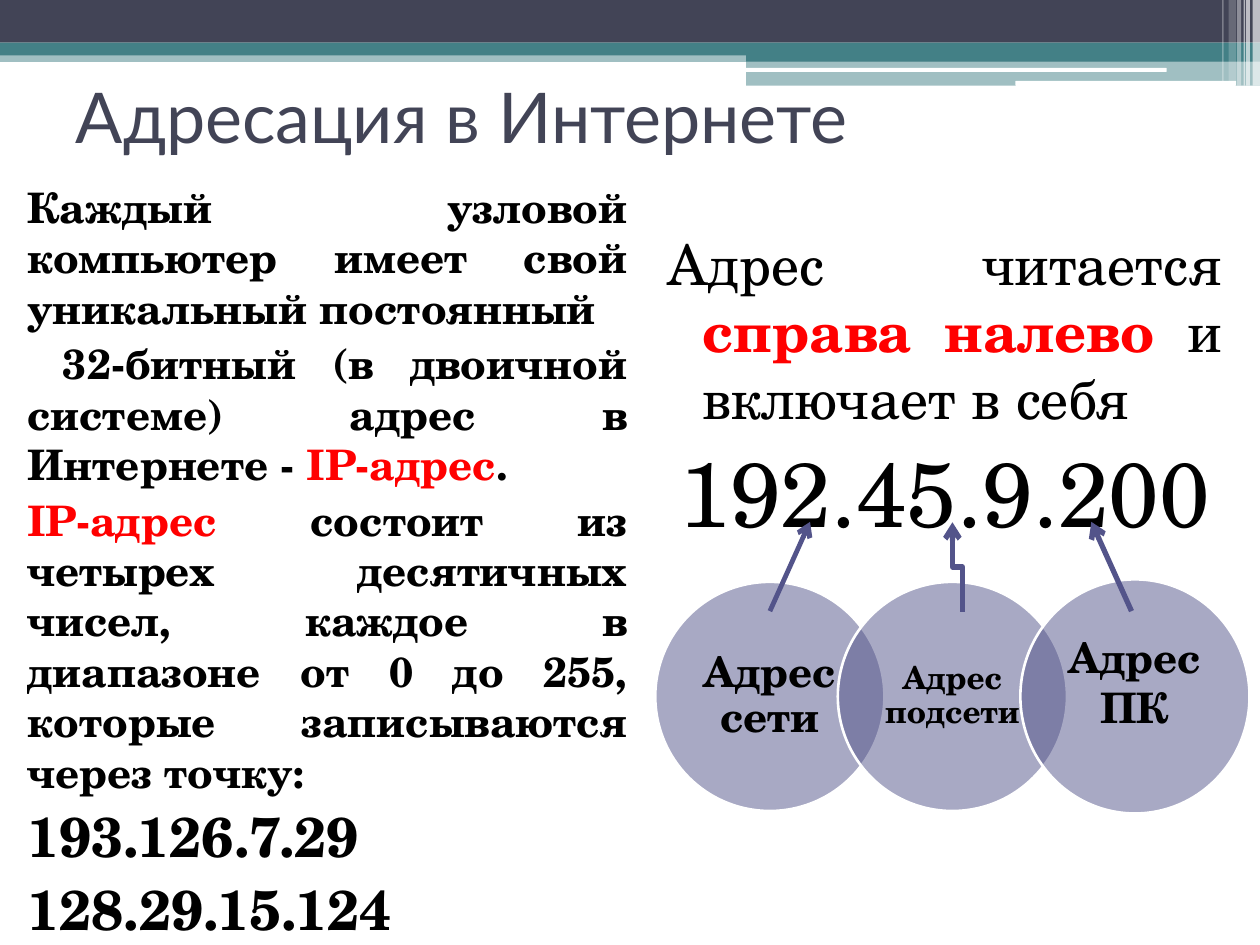
"""Build a slide that explains how IP addresses are structured."""
from lxml import etree
from pptx import Presentation
from pptx.dml.color import RGBColor
from pptx.enum.shapes import MSO_CONNECTOR, MSO_SHAPE
from pptx.enum.text import MSO_ANCHOR, PP_ALIGN
from pptx.oxml.ns import qn
from pptx.util import Cm, Pt

RECTANGLE, ROUNDED, OVAL = MSO_SHAPE.RECTANGLE, MSO_SHAPE.ROUNDED_RECTANGLE, MSO_SHAPE.OVAL
STRAIGHT, ELBOW = MSO_CONNECTOR.STRAIGHT, MSO_CONNECTOR.ELBOW
MIDDLE = MSO_ANCHOR.MIDDLE
LEFT, CENTER, JUSTIFY = PP_ALIGN.LEFT, PP_ALIGN.CENTER, PP_ALIGN.JUSTIFY

SLATE = RGBColor(0x42, 0x44, 0x56)
TEAL = RGBColor(0x43, 0x80, 0x86)
VIOLET = RGBColor(0x53, 0x54, 0x8A)
WHITE = RGBColor(0xFF, 0xFF, 0xFF)
BLACK = RGBColor(0, 0, 0)
RED = RGBColor(0xFF, 0, 0)
TITLE_FONT, BODY_FONT = "Lato", "TeX Gyre Schola"

WIDTH, HEIGHT = 25.4, 19.05
TITLE = "Адресация в Интернете"

BANDS = [
    (RECTANGLE, 0, 1.02, WIDTH, 0.23, TEAL, 50),
    (RECTANGLE, 0, 0, WIDTH, 0.86, SLATE, 100),
    (RECTANGLE, 0, 0.86, WIDTH, 0.26, TEAL, 100),
    (RECTANGLE, 15.04, 0.99, 10.36, 0.25, TEAL, 100),
    (RECTANGLE, 15.04, 1.22, 10.36, 0.51, TEAL, 50),
    (ROUNDED, 15.01, 1.37, 8.51, 0.08, WHITE, 100),
    (ROUNDED, 20.47, 1.63, 4.45, 0.1, WHITE, 100),
]
STRIPES = [
    (25.25, 0.15, 1.73, 65), (25.12, 0.08, 1.73, 65), (25.07, 0.03, 1.73, 60),
    (24.94, 0.08, 1.73, 40), (24.77, 0.15, 1.63, 20), (24.64, 0.03, 1.63, 30),
]

DEFINITION = [
    (24, JUSTIFY, 0, 0, [("Каждый узловой компьютер имеет свой уникальный постоянный", BLACK, True)]),
    (24, JUSTIFY, 0, 0.72, [
        ("32-битный (в двоичной системе) адрес в Интернете - ", BLACK, True),
        ("IP-адрес", RED, True),
        (".", BLACK, True),
    ]),
    (24, JUSTIFY, 0, 0, [
        ("IP-адрес", RED, True),
        (" состоит из четырех десятичных чисел, каждое в диапазоне от 0 до 255, "
         "которые записываются через точку:", BLACK, True),
    ]),
    (32, JUSTIFY, 0, 0, [("193.126.7.29", BLACK, True)]),
    (32, JUSTIFY, 0, 0, [("128.29.15.124", BLACK, True)]),
]
READING = [
    (32, JUSTIFY, 1.02, -0.71, [
        ("Адрес читается ", BLACK, False),
        ("справа налево ", RED, True),
        ("и включает в себя", BLACK, False),
    ]),
    (52, CENTER, 1.02, -0.71, [("192.45.9.200", BLACK, False)]),
]

CIRCLE_LEFT, CIRCLE_STEP, CIRCLE_WIDTH, CIRCLE_MIDDLE = 13.21, 3.68, 4.62, 14.04
CIRCLES = [
    ("Адрес сети", 24, 4.62, 0.9, 0.08),
    ("Адрес подсети", 18, 4.62, 0.9, 0.08),
    ("Адрес ПК", 24, 4.72, 1, 0.68),
]
ARROWS = [
    (STRAIGHT, 22.81, 12.32, 22, 10.52, 3, 0),
    (ELBOW, 18.4, 11.53, 20.2, 11.33, 3, 270),
    (STRAIGHT, 15.52, 12.32, 16.33, 10.52, 2.75, 0),
]


def add_filled(slide, kind, left, top, width, height, color, opacity):
    shape = slide.shapes.add_shape(kind, Cm(left), Cm(top), Cm(width), Cm(height))
    shape.shadow.inherit = False
    shape.fill.solid()
    shape.fill.fore_color.rgb = color
    shape.line.fill.background()
    if opacity < 100:
        color_element = shape.fill._xPr.find(qn("a:solidFill"))[0]
        etree.SubElement(color_element, qn("a:alpha")).set("val", str(opacity * 1000))
    return shape


def set_font(font, typeface, size, color, bold=False):
    font.name, font.size, font.bold = typeface, Pt(size), bold
    font.color.rgb = color


def add_title(slide):
    title = slide.shapes.title
    title.left, title.top, title.width, title.height = Cm(1.27), Cm(0.33), Cm(22.86), Cm(3.99)
    title.text_frame.text = TITLE
    title.text_frame.vertical_anchor = MIDDLE
    paragraph = title.text_frame.paragraphs[0]
    paragraph.alignment = LEFT
    set_font(paragraph.font, TITLE_FONT, 40, SLATE)


def add_text(slide, left, top, width, height, paragraphs):
    frame = slide.shapes.add_textbox(Cm(left), Cm(top), Cm(width), Cm(height)).text_frame
    frame.word_wrap = True
    for index, (size, alignment, margin, indent, runs) in enumerate(paragraphs):
        paragraph = frame.add_paragraph() if index else frame.paragraphs[0]
        paragraph.alignment, paragraph.space_before = alignment, Pt(3)
        properties = paragraph._p.get_or_add_pPr()
        properties.set("marL", str(Cm(margin)))
        properties.set("indent", str(Cm(indent)))
        for text, color, bold in runs:
            run = paragraph.add_run()
            run.text = text
            set_font(run.font, BODY_FONT, size, color, bold)


def add_circle(slide, index, text, size, height, spacing, bottom_margin):
    left, top = CIRCLE_LEFT + index * CIRCLE_STEP, CIRCLE_MIDDLE - height / 2
    circle = add_filled(slide, OVAL, left, top, CIRCLE_WIDTH, height, VIOLET, 50)
    circle.line.color.rgb = WHITE
    circle.line.width = Pt(1.5)
    frame = circle.text_frame
    frame.text, frame.word_wrap, frame.vertical_anchor = text, True, MIDDLE
    frame.margin_left = frame.margin_right = Cm(0.25)
    frame.margin_top, frame.margin_bottom = Cm(0.08), Cm(bottom_margin)
    paragraph = frame.paragraphs[0]
    paragraph.alignment, paragraph.line_spacing = CENTER, spacing
    set_font(paragraph.font, BODY_FONT, size, BLACK, True)


def add_arrow(slide, kind, start_x, start_y, end_x, end_y, width, rotation):
    arrow = slide.shapes.add_connector(kind, Cm(start_x), Cm(start_y), Cm(end_x), Cm(end_y))
    arrow.line.color.rgb = VIOLET
    arrow.line.width = Pt(width)
    etree.SubElement(arrow.line._get_or_add_ln(), qn("a:tailEnd")).set("type", "arrow")
    properties = arrow._element.spPr
    etree.SubElement(properties, qn("a:effectLst"))
    if rotation:
        properties.find(qn("a:xfrm")).set("rot", str(rotation * 60000))


def main():
    presentation = Presentation()
    presentation.slide_width, presentation.slide_height = Cm(WIDTH), Cm(HEIGHT)
    slide = presentation.slides.add_slide(presentation.slide_layouts[5])
    for band in BANDS:
        add_filled(slide, *band)
    for left, width, height, opacity in STRIPES:
        add_filled(slide, RECTANGLE, left, 0, width, height, WHITE, opacity)
    add_title(slide)
    add_text(slide, 0.3, 3.53, 12.6, 15.01, DEFINITION)
    add_text(slide, 12.9, 4.5, 11.99, 12.5, READING)
    for index, circle in enumerate(CIRCLES):
        add_circle(slide, index, *circle)
    for arrow in ARROWS:
        add_arrow(slide, *arrow)
    presentation.save("out.pptx")


if __name__ == "__main__":
    main()
